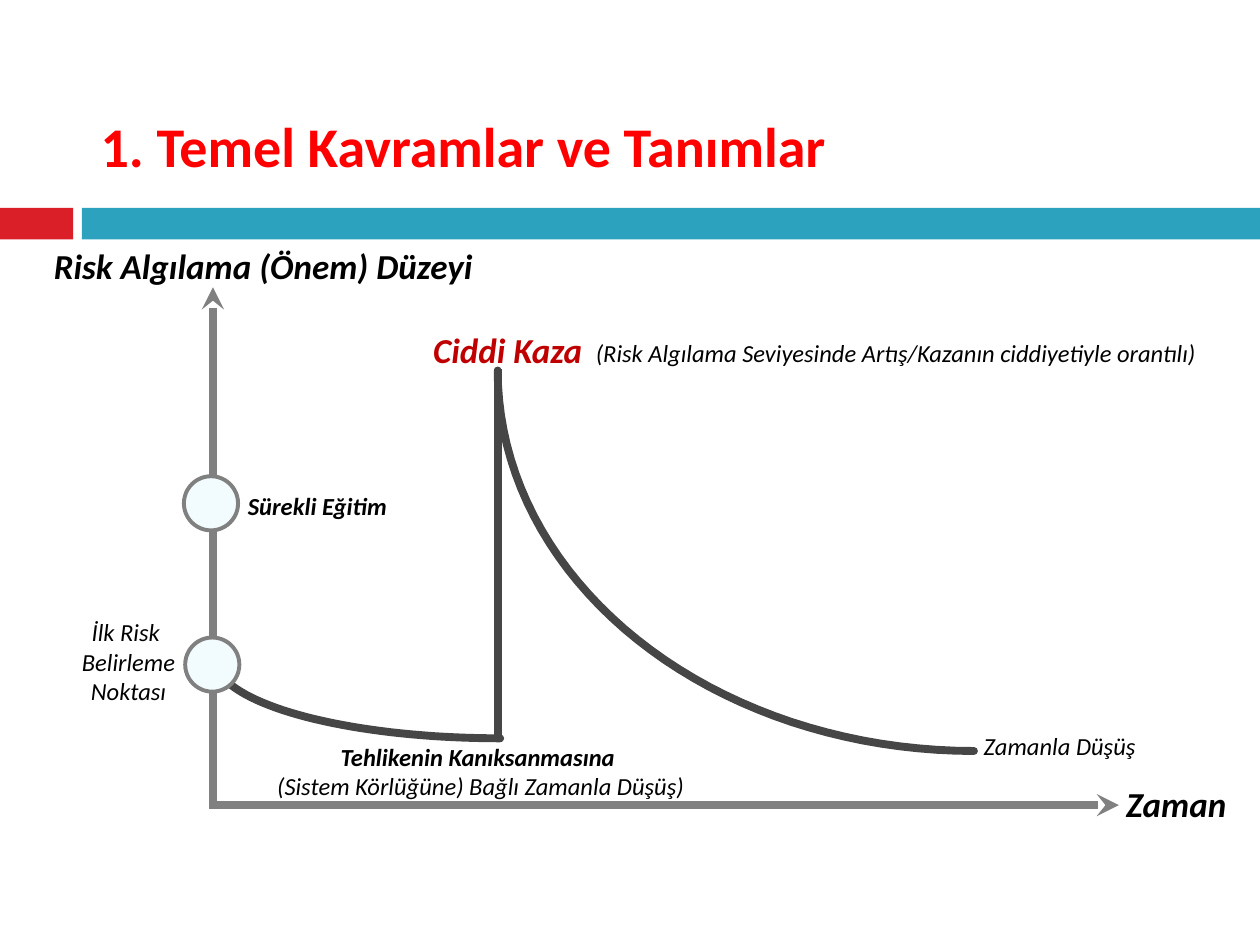
from dataclasses import dataclass
from math import cos, pi, sin

from lxml import etree
from pptx import Presentation
from pptx.dml.color import RGBColor
from pptx.enum import shapes, text
from pptx.oxml import ns
from pptx.util import Inches, Pt

RED = RGBColor(0xDA, 0x1F, 0x28)
BLUE = RGBColor(0x2D, 0xA2, 0xBF)
GRAY = RGBColor(0x80, 0x80, 0x80)
CHARCOAL = RGBColor(0x46, 0x46, 0x46)
PALE = RGBColor(0xF2, 0xFB, 0xFD)
BLACK = RGBColor(0x00, 0x00, 0x00)
TITLE_RED = RGBColor(0xFF, 0x00, 0x00)
DARK_RED = RGBColor(0xC0, 0x00, 0x00)

FONT = "Calibri"
CURVE_STEPS = 40
LEFT, CENTER, RIGHT = text.PP_ALIGN.LEFT, text.PP_ALIGN.CENTER, text.PP_ALIGN.RIGHT


@dataclass
class Label:
    """A text box; each line is a pair of wording and boldness."""
    left: float
    top: float
    width: float
    height: float
    lines: list[tuple[str, bool]]
    size: int = 14
    align: text.PP_ALIGN = CENTER
    color: RGBColor = BLACK
    italic: bool = True
    wrap: bool = True
    grow: bool = True
    anchor: text.MSO_ANCHOR = text.MSO_ANCHOR.TOP


@dataclass
class Line:
    x1: float
    y1: float
    x2: float
    y2: float
    color: RGBColor
    width: float
    arrow: bool = False


@dataclass
class Decline:
    """A quarter ellipse falling from its top left to its bottom right."""
    left: float
    top: float
    right: float
    bottom: float


LINES = [
    Line(1.69, 6.42, 1.69, 2.28, GRAY, 4.25, arrow=True),
    Line(1.67, 6.39, 8.88, 6.39, GRAY, 4.25, arrow=True),
    Line(3.95, 5.89, 3.95, 2.93, CHARCOAL, 4.5),
]
DECLINES = [Decline(1.7, 5.22, 3.97, 5.86), Decline(3.95, 2.94, 7.73, 5.96)]
LABELS = [
    Label(8.84, 6.16, 1, 0.43, [("Zaman", True)], 20, LEFT, wrap=False),
    Label(0.3, 1.89, 3.58, 0.43, [("Risk Algılama (Önem) Düzeyi ", True)], 20),
    Label(3.18, 2.56, 1.54, 0.43, [("Ciddi Kaza", True)], 20, RIGHT, DARK_RED),
    Label(0.36, 4.85, 1.32, 0.81,
          [("İlk Risk ", False), ("Belirleme Noktası", False)]),
    Label(4.63, 2.63, 5.22, 0.34,
          [("(Risk Algılama Seviyesinde Artış/Kazanın ciddiyetiyle orantılı)", False)],
          align=LEFT),
    Label(7.49, 5.75, 1.84, 0.34, [("Zamanla Düşüş", False)]),
    Label(1.99, 5.84, 3.65, 0.57,
          [("Tehlikenin Kanıksanmasına ", True),
           ("(Sistem Körlüğüne) Bağlı Zamanla Düşüş)", False)]),
    Label(1.61, 3.85, 1.56, 0.34, [("Sürekli Eğitim", True)], align=RIGHT),
    Label(0.7, 0, 8.92, 1.47, [("1. Temel Kavramlar ve Tanımlar", True)], 32, LEFT,
          TITLE_RED, italic=False, grow=False, anchor=text.MSO_ANCHOR.BOTTOM),
]


def add_filled(slide, kind: shapes.MSO_SHAPE, left: float, top: float, width: float,
               height: float, fill: RGBColor, outline: RGBColor | None = None) -> None:
    shape = slide.shapes.add_shape(
        kind, Inches(left), Inches(top), Inches(width), Inches(height))
    shape.shadow.inherit = False
    shape.fill.solid()
    shape.fill.fore_color.rgb = fill
    if outline is None:
        shape.line.fill.background()
    else:
        shape.line.color.rgb = outline
        shape.line.width = Pt(2.25)


def add_line(slide, line: Line) -> None:
    connector = slide.shapes.add_connector(
        shapes.MSO_CONNECTOR.STRAIGHT, Inches(line.x1), Inches(line.y1),
        Inches(line.x2), Inches(line.y2))
    connector.line.color.rgb = line.color
    connector.line.width = Pt(line.width)
    if line.arrow:
        etree.SubElement(connector.line._get_or_add_ln(), ns.qn("a:tailEnd"),
                         type="stealth")
    etree.SubElement(connector._element.spPr, ns.qn("a:effectLst"))


def add_decline(slide, curve: Decline) -> None:
    width, height = curve.right - curve.left, curve.bottom - curve.top
    angles = [pi / 2 * step / CURVE_STEPS for step in range(CURVE_STEPS + 1)]
    points = [(Inches(curve.right - width * cos(angle)),
               Inches(curve.top + height * sin(angle))) for angle in angles]
    builder = slide.shapes.build_freeform(*points[0])
    builder.add_line_segments(points[1:], close=False)
    shape = builder.convert_to_shape()
    shape.shadow.inherit = False
    shape.fill.background()
    shape.line.color.rgb = CHARCOAL
    shape.line.width = Pt(4.5)
    shape.line._get_or_add_ln().set("cap", "rnd")


def add_label(slide, label: Label) -> None:
    box = slide.shapes.add_textbox(Inches(label.left), Inches(label.top),
                                   Inches(label.width), Inches(label.height))
    frame = box.text_frame
    frame.word_wrap = label.wrap
    frame.vertical_anchor = label.anchor
    if label.grow:
        frame.auto_size = text.MSO_AUTO_SIZE.SHAPE_TO_FIT_TEXT
    frame.text = "\n".join(wording for wording, _ in label.lines)
    for paragraph, (_, bold) in zip(frame.paragraphs, label.lines):
        paragraph.alignment = label.align
        font = paragraph.font
        font.name, font.size = FONT, Pt(label.size)
        font.bold, font.italic = bold, label.italic
        font.color.rgb = label.color


def main() -> None:
    presentation = Presentation()
    presentation.slide_width, presentation.slide_height = Inches(10), Inches(7.5)
    slide = presentation.slides.add_slide(presentation.slide_layouts[6])

    # Band under the title
    add_filled(slide, shapes.MSO_SHAPE.RECTANGLE, 0, 1.65, 0.58, 0.25, RED)
    add_filled(slide, shapes.MSO_SHAPE.RECTANGLE, 0.65, 1.65, 9.35, 0.25, BLUE)

    # Axes, the jump at the accident and the falling curves
    for line in LINES:
        add_line(slide, line)
    for curve in DECLINES:
        add_decline(slide, curve)

    # Points on the vertical axis
    for left, top in ((1.47, 5.06), (1.46, 3.78)):
        add_filled(slide, shapes.MSO_SHAPE.OVAL, left, top, 0.43, 0.43, PALE, GRAY)

    # Title and labels
    for label in LABELS:
        add_label(slide, label)

    presentation.save("out.pptx")


if __name__ == "__main__":
    main()
